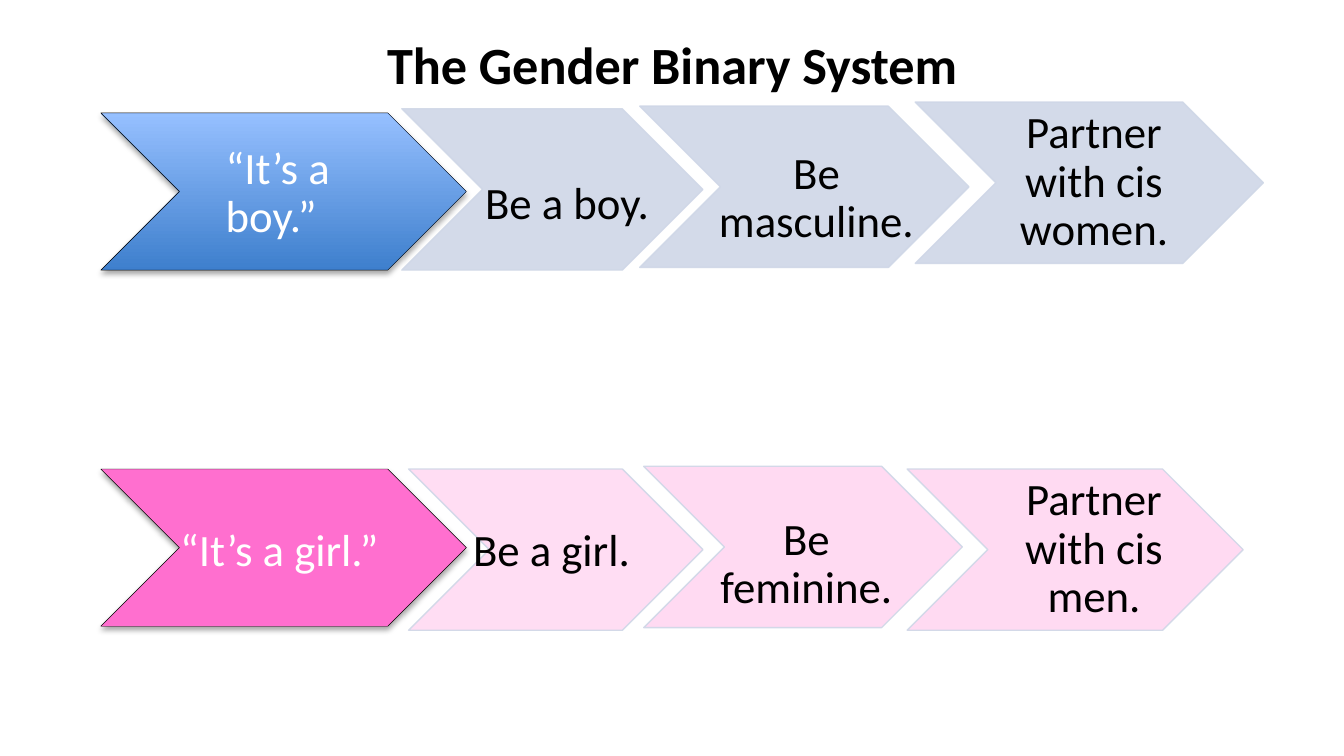
from dataclasses import dataclass

from lxml.etree import SubElement
from pptx import Presentation
from pptx.dml.color import RGBColor
from pptx.enum.shapes import MSO_SHAPE
from pptx.enum.text import MSO_ANCHOR, PP_ALIGN
from pptx.oxml.ns import qn
from pptx.util import Inches, Pt

CELL = Inches(0.1)  # the slide is a grid of 100 columns
COLUMNS, ROWS = 100, 56.25
FONT = "Calibri"
COLORS = {
    "black": "000000",
    "white": "FFFFFF",
    "deep blue": "3E7FCD",
    "light blue": "96C0FF",
    "pale blue": "CFD7E7",
    "pink": "FF6FCF",
}


@dataclass
class Step:
    """One chevron and its label; both areas are left, top, width, height in cells."""
    text: str
    chevron: tuple
    label: tuple
    opacity: int = 90
    align: PP_ALIGN = PP_ALIGN.CENTER
    inset_top: float = 0.01
    inset_right: float = 0


BOY_STEPS = [
    Step("“It’s a boy.”", (7.5, 8.4, 27.2, 11.7), (16.3, 12.1, 15, 4.7),
         align=PP_ALIGN.LEFT),
    Step("Be a boy.", (29.9, 8.1, 22.4, 12), (35.8, 13.7, 16.3, 3.1),
         align=PP_ALIGN.LEFT),
    Step("Be masculine.", (47.6, 7.9, 24.5, 12), (53.1, 8.7, 16.8, 9.9),
         inset_top=0.24, inset_right=0.18),
    Step("Partner with cis women.", (68.1, 7.6, 25.9, 12), (74.5, 7.6, 13.5, 12)),
]
GIRL_STEPS = [
    Step("“It’s a girl.”", (7.5, 34.9, 27.2, 11.7), (12.9, 38.3, 16.3, 5.5),
         align=PP_ALIGN.LEFT),
    Step("Be a girl.", (30.4, 34.9, 21.9, 12), (34.9, 36.8, 13.5, 8.6),
         opacity=23, align=PP_ALIGN.LEFT),
    Step("Be feminine.", (47.9, 34.7, 23.7, 12), (52.6, 34.9, 16.5, 12),
         opacity=25, inset_top=0.24, inset_right=0.2),
    Step("Partner with cis men.", (67.5, 34.9, 25, 12), (74.5, 34.9, 13.5, 12),
         opacity=25),
]


def rgb(name):
    return RGBColor.from_string(COLORS[name])


def cells(area):
    return [int(CELL * value) for value in area]


def add_run(para, text, size, color, bold=False):
    span = para.add_run()
    span.text = text
    span.font.name = FONT
    span.font.size = Pt(size)
    span.font.bold = bold
    span.font.color.rgb = rgb(color)


def set_opacity(fill, percent):
    """Make a solid fill, of a shape or a line, partly transparent."""
    color = fill._xPr.find(qn("a:solidFill"))[0]
    SubElement(color, qn("a:alpha"), val=str(percent * 1000))


def add_soft_shadow(shape):
    """Cast a small blurred shadow straight down."""
    shape.shadow.inherit = False
    effects = shape._element.spPr.find(qn("a:effectLst"))
    shadow = SubElement(effects, qn("a:outerShdw"), blurRad=str(Pt(3.1)),
                        dist=str(Pt(1.8)), dir="5400000", rotWithShape="0")
    color = SubElement(shadow, qn("a:srgbClr"), val=COLORS["black"])
    SubElement(color, qn("a:alpha"), val="35000")


def add_chevron(page, area, line_color, line_width):
    chevron = page.shapes.add_shape(MSO_SHAPE.CHEVRON, *cells(area))
    chevron.adjustments[0] = 0.5
    chevron.shadow.inherit = False
    chevron.line.color.rgb = rgb(line_color)
    chevron.line.width = Pt(line_width)
    return chevron


def fill_gradient(shape, bottom, top):
    shape.fill.gradient()
    shape.fill.gradient_angle = 90
    for stop, color in zip(shape.fill.gradient_stops, (bottom, top)):
        stop.color.rgb = rgb(color)


def fill_solid(shape, color):
    shape.fill.solid()
    shape.fill.fore_color.rgb = rgb(color)


def add_label(page, step, color, inset_left):
    box = page.shapes.add_textbox(*cells(step.label))
    frame = box.text_frame
    frame.word_wrap = True
    frame.vertical_anchor = MSO_ANCHOR.MIDDLE
    frame.margin_left = Inches(inset_left)
    frame.margin_right = Inches(step.inset_right)
    frame.margin_top = Inches(step.inset_top)
    frame.margin_bottom = Inches(0.01)
    para = frame.paragraphs[0]
    para.alignment = step.align
    para.line_spacing = 0.9
    add_run(para, step.text, 24, color)


def add_first_step(page, step, colors):
    chevron = add_chevron(page, step.chevron, "black", 0.25)
    if len(colors) == 2:
        fill_gradient(chevron, *colors)
    else:
        fill_solid(chevron, *colors)
    add_soft_shadow(chevron)
    add_label(page, step, "white", 0.05)


def add_next_step(page, step, color):
    chevron = add_chevron(page, step.chevron, "pale blue", 0.75)
    fill_solid(chevron, color)
    set_opacity(chevron.fill, step.opacity)
    set_opacity(chevron.line.fill, 90)
    add_label(page, step, "black", 0.03)


def add_chain(page, steps, first_colors, next_color):
    first, *others = steps
    add_first_step(page, first, first_colors)
    for step in others:
        add_next_step(page, step, next_color)


def set_title(page, text):
    title = page.shapes.title
    title.left, title.top, title.width, title.height = cells((5, 2.3, 90, 4.9))
    frame = title.text_frame
    frame.vertical_anchor = MSO_ANCHOR.MIDDLE
    para = frame.paragraphs[0]
    para.alignment = PP_ALIGN.CENTER
    add_run(para, text, 28, "black", bold=True)


def main():
    deck = Presentation()
    deck.slide_width, deck.slide_height = cells((COLUMNS, ROWS))
    page = deck.slides.add_slide(deck.slide_layouts[5])
    set_title(page, "The Gender Binary System")
    add_chain(page, BOY_STEPS, ("deep blue", "light blue"), "pale blue")
    add_chain(page, GIRL_STEPS, ("pink",), "pink")
    deck.save("out.pptx")


if __name__ == "__main__":
    main()
